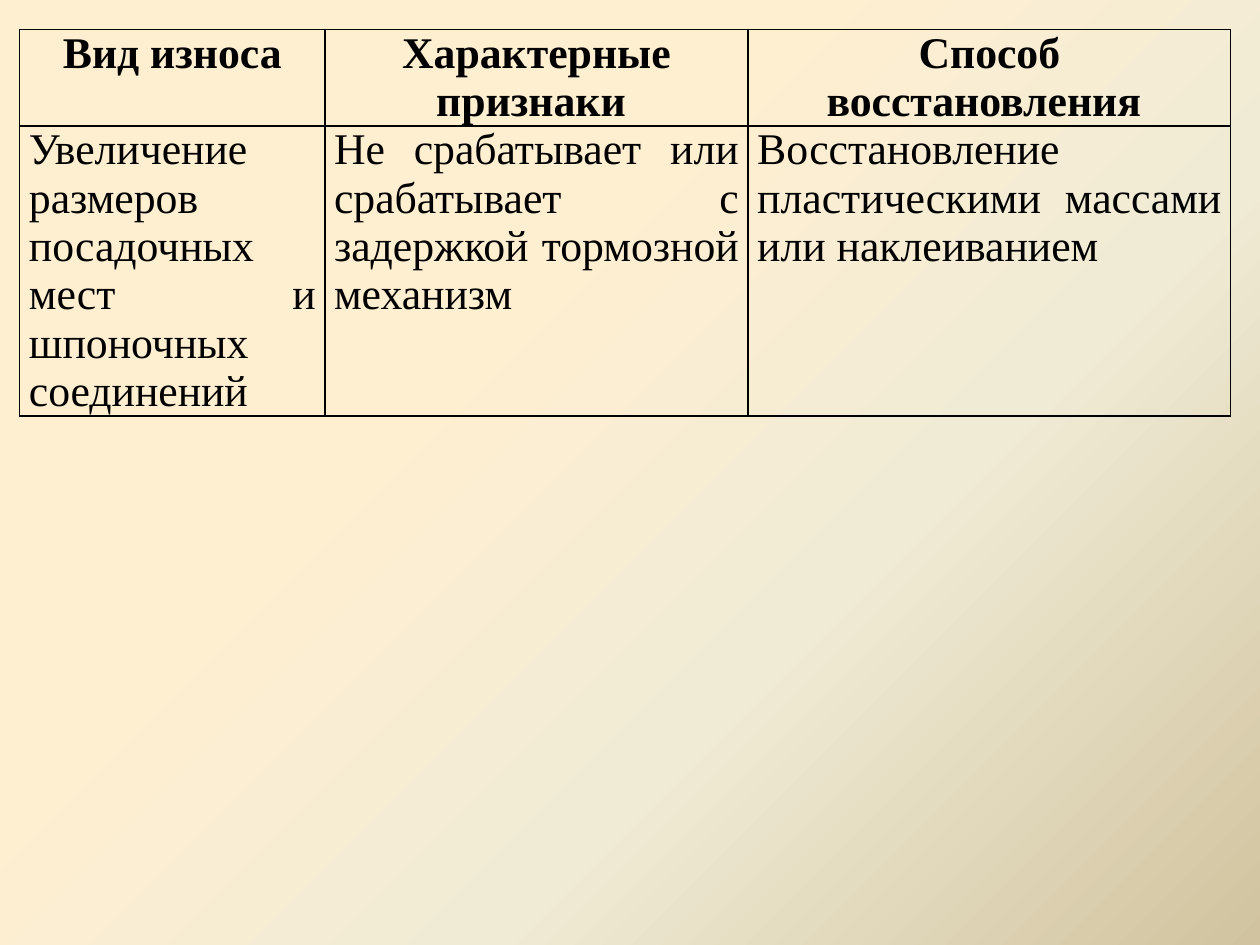
from lxml.etree import SubElement
from pptx import Presentation
from pptx.dml.color import RGBColor
from pptx.enum.text import PP_ALIGN
from pptx.oxml.ns import qn
from pptx.util import Pt


def add_color(parent, color):
    fill = SubElement(parent, qn("a:solidFill")) if parent.tag != qn("a:gs") else parent
    SubElement(fill, qn("a:srgbClr"), val=color)


def add_border(cell, side):
    properties = cell._tc.get_or_add_tcPr()
    line = SubElement(properties, qn("a:" + side), w=str(Pt(1)))
    add_color(line, "000000")


deck = Presentation()
deck.slide_width, deck.slide_height = Pt(720), Pt(540)
page = deck.slides.add_slide(deck.slide_layouts[6])

background = page.background.fill
background.gradient()
background.gradient_angle = 315
stops = page.element.find(".//" + qn("a:gsLst"))
for stop in list(stops):
    stops.remove(stop)
for position, color in ((36, "FFEFD1"), (65, "F0EBD5"), (100, "D1C39F")):
    add_color(SubElement(stops, qn("a:gs"), pos=str(position * 1000)), color)

rows = (
    ("Вид износа", "Характерные признаки ", "Способ восстановления "),
    (
        "Увеличение размеров посадочных мест и шпоночных соединений",
        "Не срабатывает или срабатывает с задержкой тормозной механизм",
        "Восстановление пластическими массами или наклеиванием",
    ),
)
frame = page.shapes.add_table(2, 3, Pt(11.25), Pt(16.8), Pt(692), Pt(59))
frame.height = Pt(240)
table = frame.table
table.first_row = table.horz_banding = False
for column, width in zip(table.columns, (174.4, 241.8, 275.8)):
    column.width = Pt(width)

for row_index, texts in enumerate(rows):
    header = row_index == 0
    for column_index, text in enumerate(texts):
        cell = table.cell(row_index, column_index)
        cell.margin_left = cell.margin_right = Pt(5.3)
        cell.margin_top = cell.margin_bottom = Pt(0)
        for side in ("lnL", "lnR", "lnT", "lnB"):
            add_border(cell, side)
        cell.fill.background()
        para = cell.text_frame.paragraphs[0]
        para.alignment = PP_ALIGN.CENTER if header else PP_ALIGN.JUSTIFY
        para.space_before = Pt(0 if header else 3)
        para.space_after = Pt(6 if header else 3)
        span = para.add_run()
        span.text = text
        span.font.name = "Times New Roman"
        span.font.size = Pt(25)
        span.font.bold = header
        span.font.color.rgb = RGBColor.from_string("000000")

deck.save("out.pptx")
